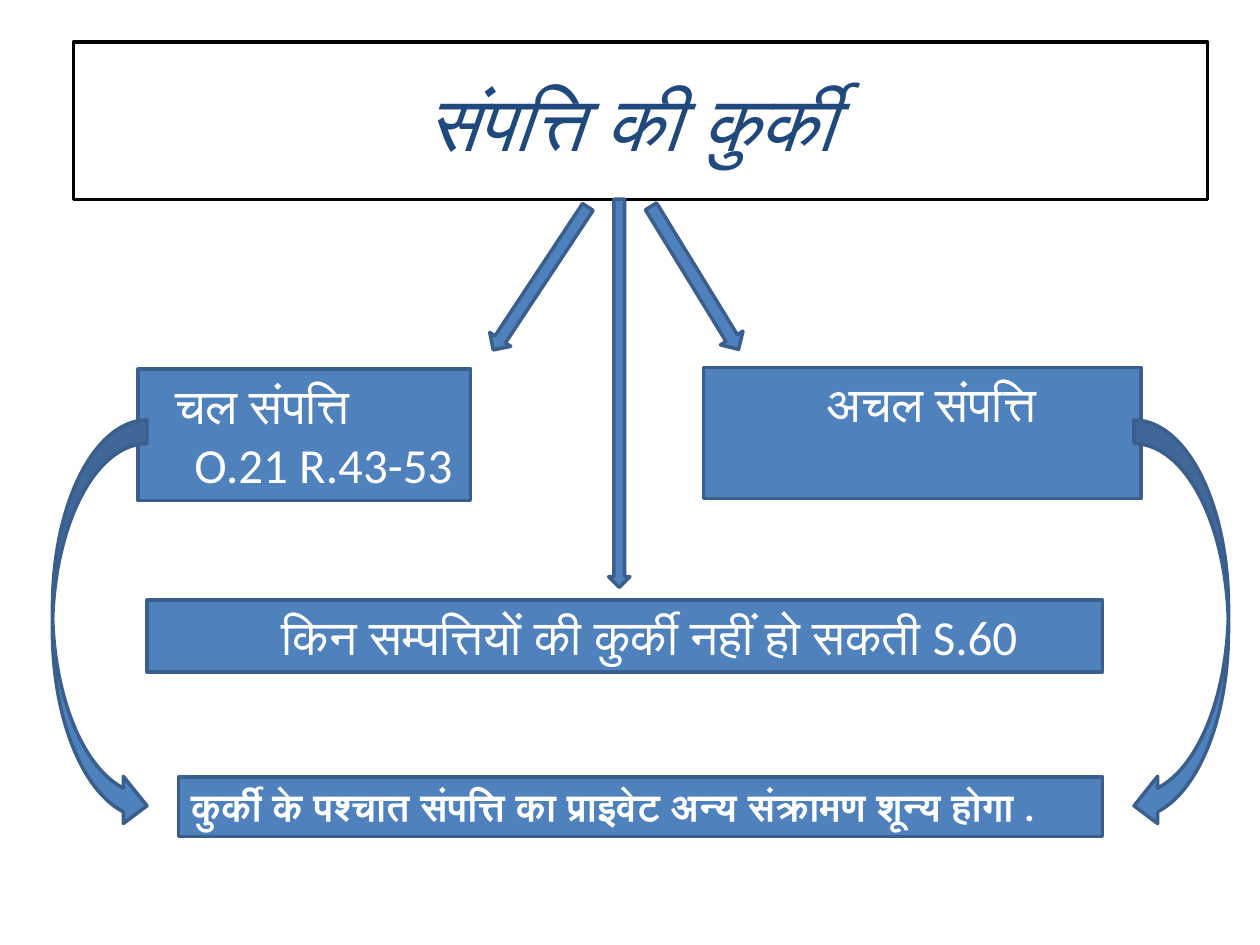
from pptx import Presentation
from pptx import util as u
from pptx.dml.color import RGBColor
from pptx.enum import shapes, text

COLORS = {"blue": "4F81BD", "edge": "3A5F8C", "white": "FFFFFF",
          "black": "000000", "navy": "1F497D"}
FONT = "Calibri"
SHAPE = shapes.MSO_SHAPE


def color(name):
    return RGBColor.from_string(COLORS[name])


def add_block(page, kind, box, fill="blue", line="edge", rotation=0):
    left, top, width, height = (u.Pt(value) for value in box)
    block = page.shapes.add_shape(kind, left, top, width, height)
    block.shadow.inherit = False
    block.fill.solid()
    block.fill.fore_color.rgb = color(fill)
    block.line.color.rgb = color(line)
    block.line.width = u.Pt(2)
    block.rotation = rotation
    return block


def write_lines(block, lines, size, ink="white", bold=False, italic=False,
                align=text.PP_ALIGN.LEFT, anchor=text.MSO_ANCHOR.TOP, wrap=True):
    """Each line is a pair of words and left indent in points."""
    frame = block.text_frame
    frame.word_wrap = wrap
    frame.vertical_anchor = anchor
    for index, (words, indent) in enumerate(lines):
        para = frame.add_paragraph() if index else frame.paragraphs[0]
        para.alignment = align
        properties = para._p.get_or_add_pPr()
        properties.set("marL", str(u.Pt(indent)))
        properties.set("indent", "0")
        span = para.add_run()
        span.text = words
        span.font.name = FONT
        span.font.size = u.Pt(size)
        span.font.bold = bold
        span.font.italic = italic
        span.font.color.rgb = color(ink)


def add_title(page, box):
    title = add_block(page, SHAPE.RECTANGLE, box, "white", "black")
    write_lines(title, [("संपत्ति की कुर्की ", 0)], 44, "navy", italic=True,
                align=text.PP_ALIGN.CENTER, anchor=text.MSO_ANCHOR.MIDDLE)


def add_label(page, box, lines, size=28, bold=False, wrap=True):
    label = add_block(page, SHAPE.RECTANGLE, box)
    write_lines(label, lines, size, bold=bold, wrap=wrap)


def add_branches(page):
    """Three arrows fanning out below the title."""
    for box, rotation in [((301.7, 110.2, 14.4, 97.9), 33.5),
                          ((389.5, 110.9, 15.1, 95.8), 328.5),
                          ((347.8, 113.8, 12.2, 221.8), 0)]:
        add_block(page, SHAPE.DOWN_ARROW, box, rotation=rotation)


def add_side_arrows(page, box):
    """Curved arrows along both sides of the box."""
    left, top, width, height = box
    arrow = 54
    add_block(page, SHAPE.CURVED_RIGHT_ARROW, (left, top, arrow, height))
    add_block(page, SHAPE.CURVED_LEFT_ARROW,
              (left + width - arrow, top, arrow, height))


def main():
    deck = Presentation()
    deck.slide_width, deck.slide_height = u.Pt(720), u.Pt(540)
    page = deck.slides.add_slide(deck.slide_layouts[6])

    add_title(page, (42, 24, 648, 90))

    # Kinds of property
    add_label(page, (79, 211, 190, 75),
              [("चल संपत्ति", 14), ("O.21 R.43-53", 25)], wrap=False)
    add_label(page, (402, 210, 250, 75), [("अचल संपत्ति", 63)])

    # Exempt property
    add_label(page, (84, 343, 546, 41),
              [("किन सम्पत्तियों की कुर्की नहीं हो सकती S.60", 70)])
    add_branches(page)

    # Effect of attachment
    add_side_arrows(page, (30, 240, 672, 234))
    add_label(page, (102, 444, 528, 34),
              [("कुर्की के पश्चात संपत्ति का प्राइवेट अन्य संक्रामण शून्य होगा .", 0)],
              size=22, bold=True)

    deck.save("out.pptx")


if __name__ == "__main__":
    main()
